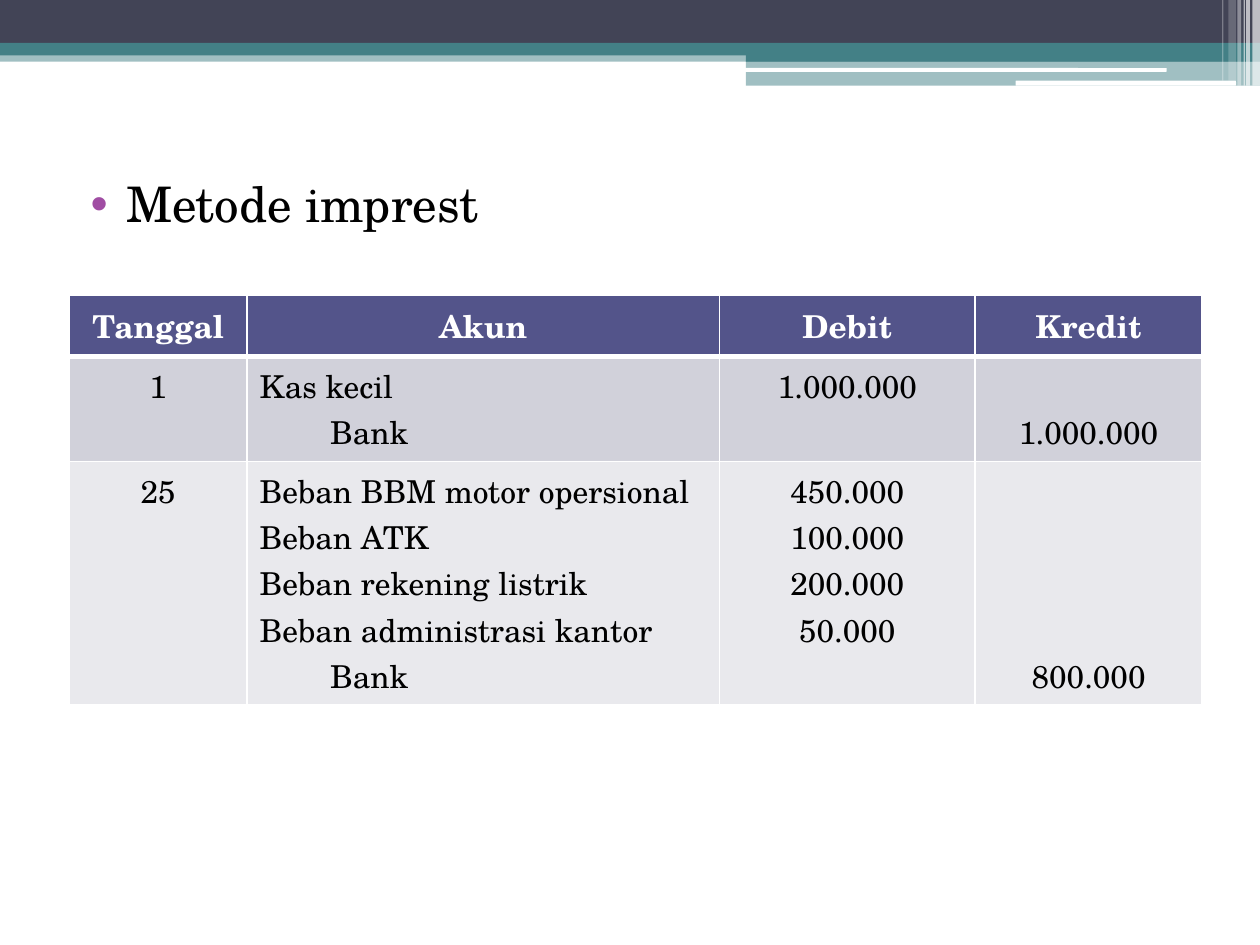
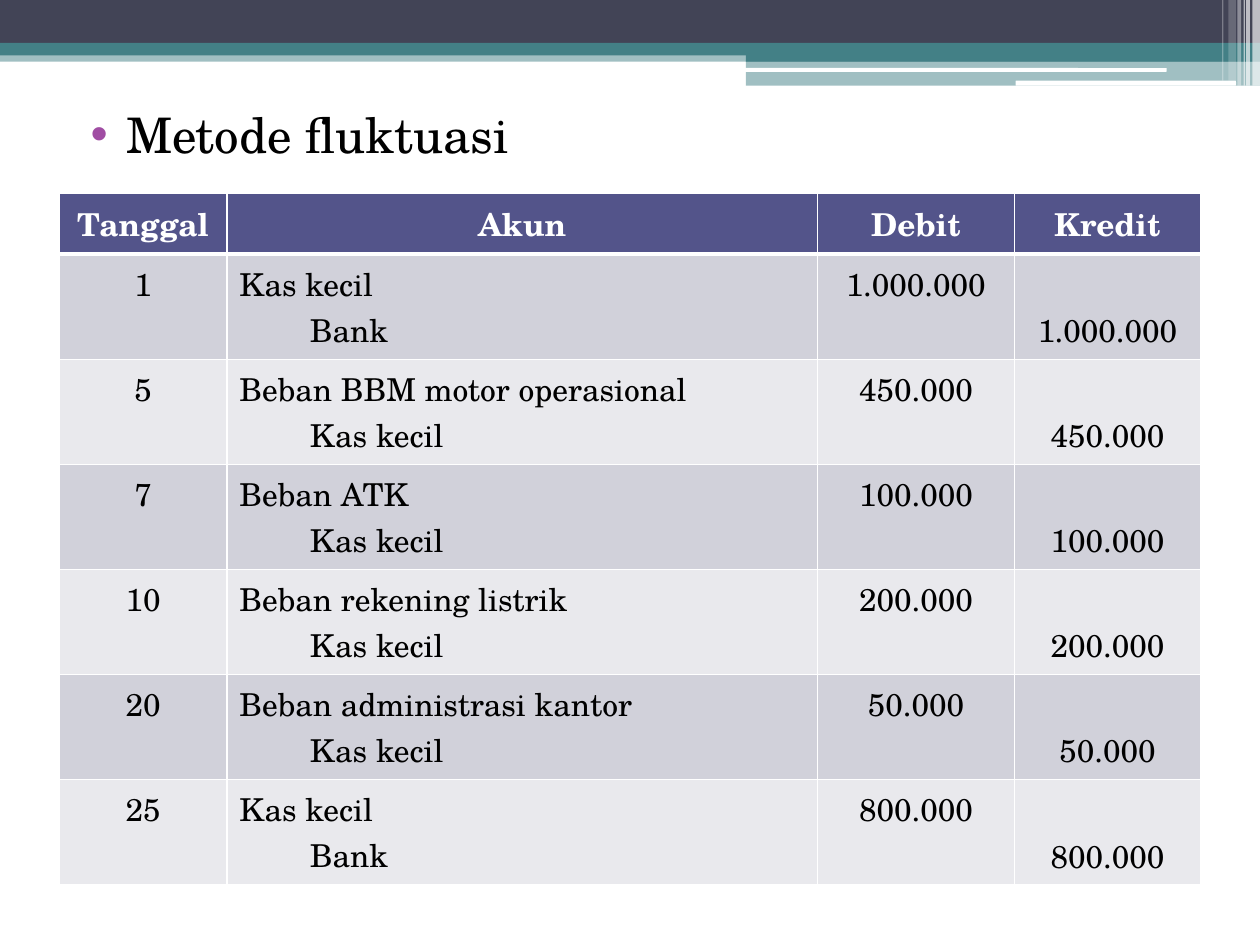
"""Build two slides of petty cash journals, one for each recording method."""
import pptx
import pptx.util
import pptx.dml.color
import pptx.enum.shapes
import pptx.enum.text
import pptx.oxml
import pptx.oxml.ns

Inches, Pt = pptx.util.Inches, pptx.util.Pt
SHAPE = pptx.enum.shapes.MSO_SHAPE
ALIGN = pptx.enum.text.PP_ALIGN
ANCHOR = pptx.enum.text.MSO_ANCHOR
NS = pptx.oxml.ns.nsdecls("a")
FONT = "TeX Gyre Schola"
COLORS = {
    "slate": "424456", "teal": "438086", "white": "FFFFFF", "black": "000000",
    "bullet": "A04DA3", "header": "53548A", "odd": "D1D1DA", "even": "E9E9ED",
}
BANDS = [
    (0, 0.4, 10, 0.09, SHAPE.RECTANGLE, "teal", 50),
    (0, 0, 10, 0.34, SHAPE.RECTANGLE, "slate", 100),
    (0, 0.34, 10, 0.1, SHAPE.RECTANGLE, "teal", 100),
    (5.92, 0.39, 4.08, 0.1, SHAPE.RECTANGLE, "teal", 100),
    (5.92, 0.48, 4.08, 0.2, SHAPE.RECTANGLE, "teal", 50),
    (5.91, 0.54, 3.35, 0.03, SHAPE.ROUNDED_RECTANGLE, "white", 100),
    (8.06, 0.64, 1.75, 0.04, SHAPE.ROUNDED_RECTANGLE, "white", 100),
    (9.94, 0, 0.06, 0.68, SHAPE.RECTANGLE, "white", 65),
    (9.89, 0, 0.03, 0.68, SHAPE.RECTANGLE, "white", 65),
    (9.87, 0, 0.01, 0.68, SHAPE.RECTANGLE, "white", 60),
    (9.82, 0, 0.03, 0.68, SHAPE.RECTANGLE, "white", 40),
    (9.75, 0, 0.06, 0.64, SHAPE.RECTANGLE, "white", 20),
    (9.7, 0, 0.01, 0.64, SHAPE.RECTANGLE, "white", 30),
]
HEADINGS = ["Tanggal", "Akun", "Debit", "Kredit"]
LINE_HEIGHT, CELL_PADDING = 0.367, 0.1
CREDIT_INDENT = 0.56
JOURNALS = [
    {
        "method": "Metode imprest", "title_top": 1.33,
        "left": 0.55, "top": 2.34, "columns": [1.41, 3.75, 2.03, 1.8],
        "entries": [
            ("1", [("Kas kecil", "1.000.000")], "Bank", "1.000.000"),
            ("25", [("Beban BBM motor opersional", "450.000"),
                    ("Beban ATK", "100.000"),
                    ("Beban rekening listrik", "200.000"),
                    ("Beban administrasi kantor", "50.000")], "Bank", "800.000"),
        ],
    },
    {
        "method": "Metode fluktuasi", "title_top": 0.78,
        "left": 0.47, "top": 1.53, "columns": [1.33, 4.69, 1.56, 1.48],
        "entries": [
            ("1", [("Kas kecil", "1.000.000")], "Bank", "1.000.000"),
            ("5", [("Beban BBM motor operasional", "450.000")], "Kas kecil", "450.000"),
            ("7", [("Beban ATK", "100.000")], "Kas kecil", "100.000"),
            ("10", [("Beban rekening listrik", "200.000")], "Kas kecil", "200.000"),
            ("20", [("Beban administrasi kantor", "50.000")], "Kas kecil", "50.000"),
            ("25", [("Kas kecil", "800.000")], "Bank", "800.000"),
        ],
    },
]


def rgb(name):
    return pptx.dml.color.RGBColor.from_string(COLORS[name])


def style_runs(paragraph, size, color, bold=False):
    for run in paragraph.runs:
        run.font.name = FONT
        run.font.size = Pt(size)
        run.font.bold = bold
        run.font.color.rgb = rgb(color)


prs = pptx.Presentation()
prs.slide_width, prs.slide_height = Inches(10), Inches(7.5)

for journal in JOURNALS:
    slide = prs.slides.add_slide(prs.slide_layouts[5])

    for left, top, width, height, outline, color, opacity in BANDS:
        band = slide.shapes.add_shape(
            outline, Inches(left), Inches(top), Inches(width), Inches(height))
        band.shadow.inherit = False
        band.line.fill.background()
        band.fill.solid()
        band.fill.fore_color.rgb = rgb(color)
        if opacity < 100:
            fill_color = band.fill._xPr.find(".//" + pptx.oxml.ns.qn("a:srgbClr"))
            fill_color.append(pptx.oxml.parse_xml(
                f'<a:alpha {NS} val="{opacity * 1000}"/>'))

    title = slide.shapes.title
    title.left, title.top = Inches(0.5), Inches(journal["title_top"])
    title.width, title.height = Inches(9), Inches(0.7)
    title.text_frame.text = journal["method"]
    title.text_frame.vertical_anchor = ANCHOR.TOP
    method = title.text_frame.paragraphs[0]
    method.alignment = ALIGN.LEFT
    method.space_before = Pt(3)
    style_runs(method, 28, "black")
    bullet = method._p.get_or_add_pPr()
    bullet.set("marL", str(Inches(0.4)))
    bullet.set("indent", str(Inches(-0.28)))
    for xml in (f'<a:buClr {NS}><a:srgbClr val="{COLORS["bullet"]}"/></a:buClr>',
                f'<a:buFont {NS} typeface="Arial"/>',
                f'<a:buChar {NS} char="•"/>'):
        bullet.append(pptx.oxml.parse_xml(xml))

    rows = [HEADINGS]
    for date, debits, credit_account, credit in journal["entries"]:
        accounts = [account for account, amount in debits] + [credit_account]
        amounts = [amount for account, amount in debits]
        rows.append([date, "\n".join(accounts), "\n".join(amounts), credit])
    heights = [CELL_PADDING + LINE_HEIGHT * (row[1].count("\n") + 1) for row in rows]

    table = slide.shapes.add_table(
        len(rows), len(HEADINGS), Inches(journal["left"]), Inches(journal["top"]),
        Inches(sum(journal["columns"])), Inches(sum(heights))).table
    for column, width in zip(table.columns, journal["columns"]):
        column.width = Inches(width)

    for r, row in enumerate(rows):
        table.rows[r].height = Inches(heights[r])
        is_header = r == 0
        for c, text in enumerate(row):
            cell = table.cell(r, c)
            cell.text_frame.text = text
            cell.fill.solid()
            cell.fill.fore_color.rgb = rgb(
                "header" if is_header else "odd" if r % 2 else "even")
            is_account = HEADINGS[c] == "Akun" and not is_header
            is_credit = HEADINGS[c] == "Kredit" and not is_header
            cell.vertical_anchor = ANCHOR.BOTTOM if is_credit else ANCHOR.TOP
            for paragraph in cell.text_frame.paragraphs:
                paragraph.alignment = ALIGN.LEFT if is_account else ALIGN.CENTER
                style_runs(paragraph, 18, "white" if is_header else "black", is_header)
            if is_account:
                credit_line = cell.text_frame.paragraphs[-1]._p.get_or_add_pPr()
                credit_line.set("marL", str(Inches(CREDIT_INDENT)))
            borders = {"lnL": 1, "lnR": 1, "lnT": 3 if r == 1 else 1,
                       "lnB": 3 if is_header else 1}
            for position, (side, weight) in enumerate(borders.items()):
                cell._tc.get_or_add_tcPr().insert(position, pptx.oxml.parse_xml(
                    f'<a:{side} {NS} w="{Pt(weight)}"><a:solidFill>'
                    f'<a:srgbClr val="{COLORS["white"]}"/></a:solidFill></a:{side}>'))

prs.save("out.pptx")
